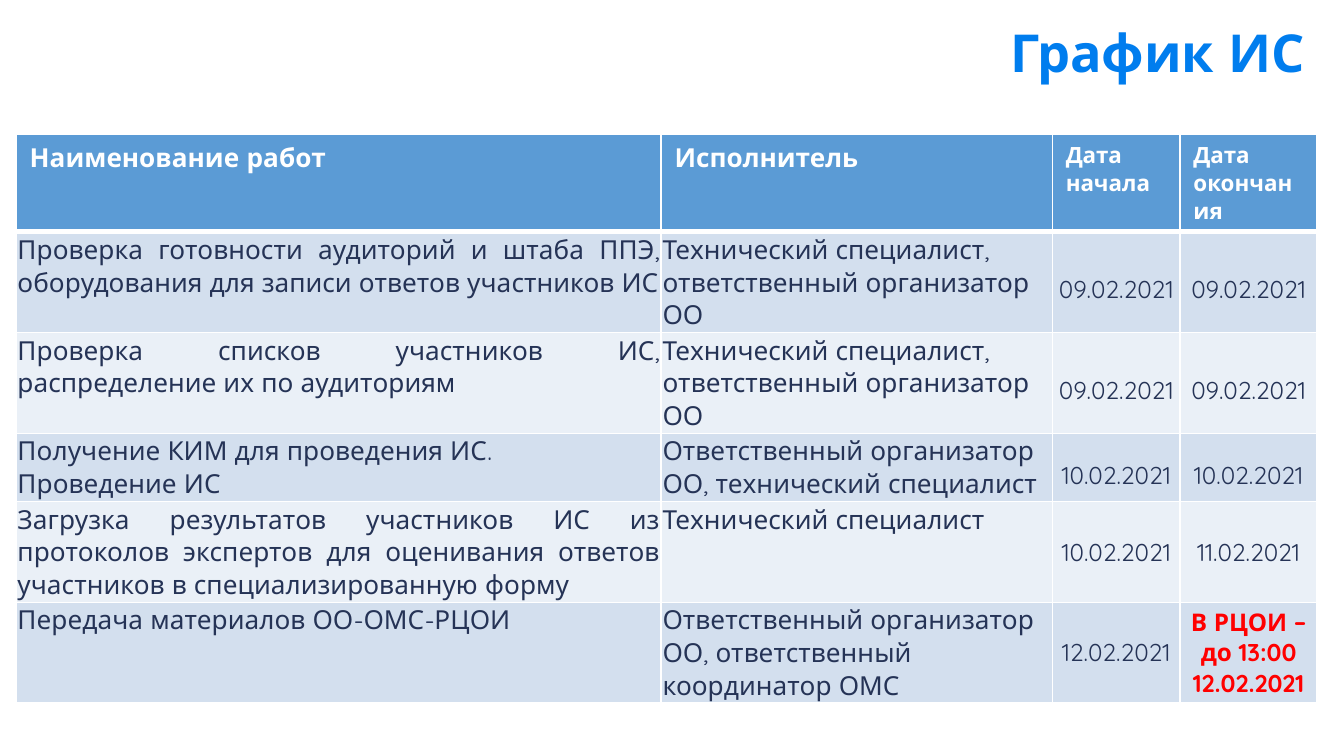
import pptx
import pptx.util
import pptx.dml.color
import pptx.enum.text
import pptx.oxml.ns
import lxml.etree

Inches = pptx.util.Inches
Pt = pptx.util.Pt
RGB = pptx.dml.color.RGBColor
ALIGN = pptx.enum.text.PP_ALIGN
ANCHOR = pptx.enum.text.MSO_ANCHOR

BLUE = RGB(0x00, 0x7D, 0xEE)
HEAD = RGB(0x5B, 0x9B, 0xD5)
BANDS = [RGB(0xD3, 0xDF, 0xEE), RGB(0xEA, 0xF0, 0xF7)]
INK = RGB(0x25, 0x33, 0x56)
RED = RGB(0xFF, 0x00, 0x00)
WHITE = RGB(0xFF, 0xFF, 0xFF)
FONT = "Quicksand"

COLS = [4.8, 2.91, 0.95, 1.02]
SIDES = [ALIGN.JUSTIFY, ALIGN.LEFT, ALIGN.CENTER, ALIGN.CENTER]
HEADS = ["Наименование работ", "Исполнитель", "Дата начала", "Дата окончания"]
BOTH = "Технический специалист, ответственный организатор ОО"
TASKS = [
    ["Проверка готовности аудиторий и штаба ППЭ, оборудования для записи "
     "ответов участников ИС", BOTH, "09.02.2021", "09.02.2021"],
    ["Проверка списков участников ИС, распределение их по аудиториям",
     BOTH, "09.02.2021", "09.02.2021"],
    ["Получение КИМ для проведения ИС.\nПроведение ИС",
     "Ответственный организатор ОО, технический специалист",
     "10.02.2021", "10.02.2021"],
    ["Загрузка результатов участников ИС из протоколов экспертов для "
     "оценивания ответов участников в специализированную форму",
     "Технический специалист", "10.02.2021", "11.02.2021"],
    ["Передача материалов ОО-ОМС-РЦОИ",
     "Ответственный организатор ОО, ответственный координатор ОМС",
     "12.02.2021", "В РЦОИ – до 13:00 12.02.2021"],
]
WIDE = 3  # the first rows space their dates at one and a half lines


def apply(item, values):
    for name, value in values.items():
        setattr(item, name, value)


def style(frame, para, font, ink):
    for line in frame.paragraphs:
        apply(line, para)
        apply(line.font, {"name": FONT, **font})
        line.font.color.rgb = ink


def margins(across, down):
    return {"margin_left": Inches(across), "margin_right": Inches(across),
            "margin_top": Inches(down), "margin_bottom": Inches(down)}


def add_title(slide, left, top, width, height):
    title = slide.shapes.title
    apply(title, {"left": Inches(left), "top": Inches(top),
                  "width": Inches(width), "height": Inches(height)})
    frame = title.text_frame
    frame.text = "График ИС"
    apply(frame, {"word_wrap": True, "vertical_anchor": ANCHOR.MIDDLE,
                  "auto_size": pptx.enum.text.MSO_AUTO_SIZE.NONE,
                  **margins(0.09, 0.04)})
    style(frame, {"alignment": ALIGN.RIGHT, "line_spacing": 0.9},
          {"size": Pt(28), "bold": True}, BLUE)


def add_edges(cell, row):
    """Draw white cell borders, thick between the heading and the tasks."""
    props = cell._tc.get_or_add_tcPr()
    thick = {0: "lnB", 1: "lnT"}.get(row)
    for side in ("lnL", "lnR", "lnT", "lnB"):
        line = lxml.etree.SubElement(props, pptx.oxml.ns.qn(f"a:{side}"))
        line.set("w", str(Pt(3 if side == thick else 1)))
        fill = lxml.etree.SubElement(line, pptx.oxml.ns.qn("a:solidFill"))
        tint = lxml.etree.SubElement(fill, pptx.oxml.ns.qn("a:srgbClr"))
        tint.set("val", str(WHITE))


def fill_cell(cell, text, row, col):
    date = col > 1
    cell.text = text
    add_edges(cell, row)
    if row == 0:
        back, ink = HEAD, WHITE
        para = {"alignment": ALIGN.LEFT}
        font = {"size": Pt(12 if date else 14), "bold": True}
    else:
        due = text.startswith("В РЦОИ")
        back, ink = BANDS[(row - 1) % 2], RED if due else INK
        apply(cell, margins(0.01, 0.01))
        para = {"alignment": SIDES[col]}
        if date:
            cell.vertical_anchor = ANCHOR.MIDDLE
            para["line_spacing"] = 1.5 if row <= WIDE else 1.0
        font = {"size": Pt(13 if date else 14), "bold": due}
    cell.fill.solid()
    cell.fill.fore_color.rgb = back
    style(cell.text_frame, para, font, ink)


def add_plan(slide, left, top, width, height):
    rows = [HEADS] + TASKS
    table = slide.shapes.add_table(
        len(rows), len(COLS), Inches(left), Inches(top),
        Inches(width), Inches(height)).table
    for col, size in zip(table.columns, COLS):
        col.width = Inches(size)
    for r, texts in enumerate(rows):
        table.rows[r].height = Inches(0.41 if r else 0.63)
        for c, text in enumerate(texts):
            fill_cell(table.cell(r, c), text, r, c)


def main():
    deck = pptx.Presentation()
    wide = Inches(10)
    apply(deck, {"slide_width": wide, "slide_height": wide * 9 // 16})
    slide = deck.slides.add_slide(deck.slide_layouts[5])
    add_title(slide, 1.18, 0.06, 8.62, 0.71)
    add_plan(slide, 0.12, 1, sum(COLS), 4.07)
    deck.save("out.pptx")


if __name__ == "__main__":
    main()
